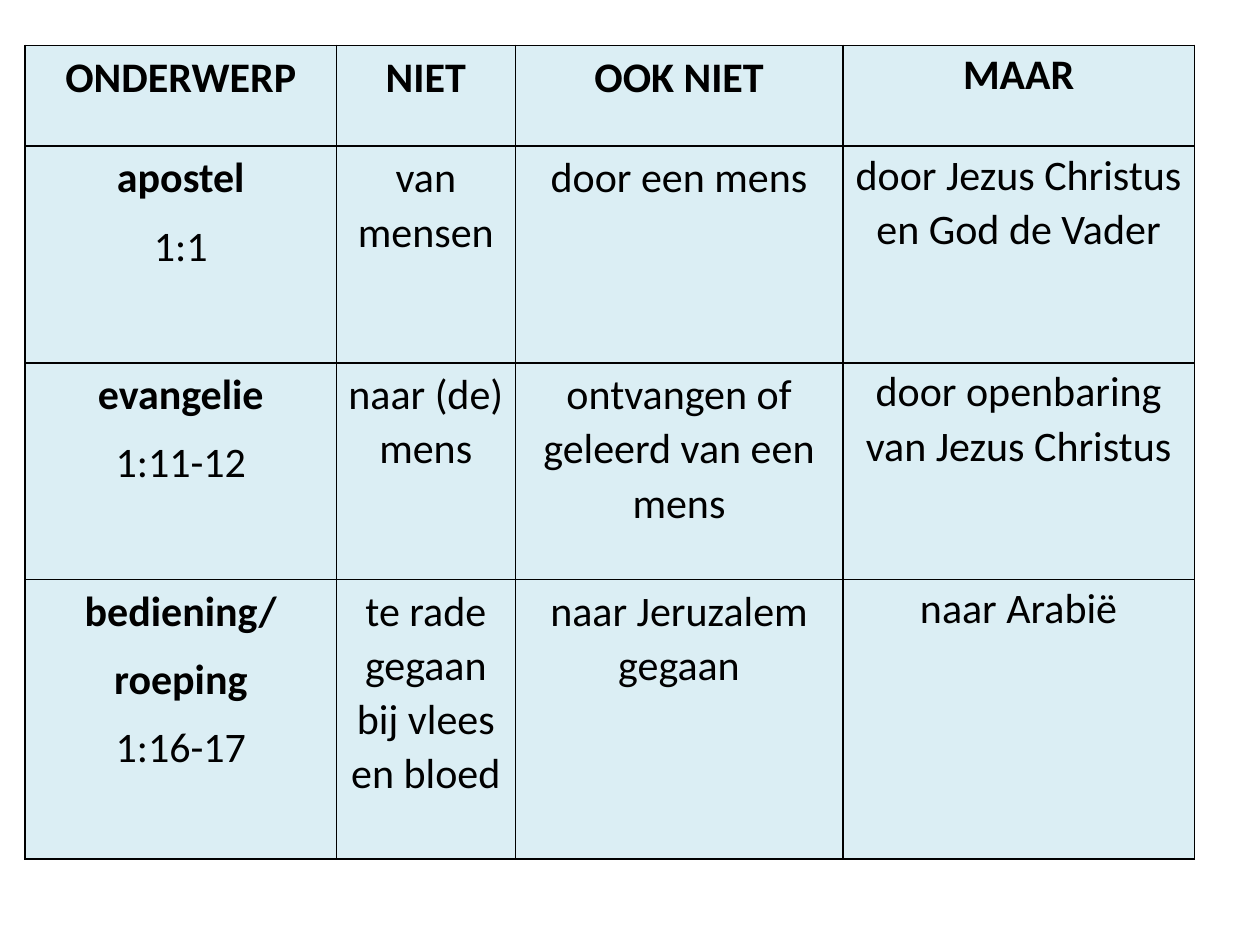
from dataclasses import dataclass

from lxml import etree
from pptx import Presentation
from pptx.dml.color import RGBColor
from pptx.enum.text import PP_ALIGN
from pptx.oxml.ns import qn
from pptx.table import _Cell
from pptx.util import Inches, Pt

CENTER = PP_ALIGN.CENTER
COLORS = {"fill": "DBEEF4", "text": "000000", "border": "000000"}
FONT = "Calibri"
COL_WIDTHS = [2.47, 1.42, 2.6, 2.79]
ROW_HEIGHTS = [0.8, 1.72, 1.72, 2.22]


@dataclass
class Topic:
    title: list[str]
    verse: str
    answers: list[str]


HEADERS = ["ONDERWERP", "NIET", "OOK NIET", "MAAR"]
TOPICS = [
    Topic(["apostel"], "1:1",
          ["van mensen", "door een mens", "door Jezus Christus en God de Vader"]),
    Topic(["evangelie"], "1:11-12",
          ["naar (de) mens", "ontvangen of geleerd van een mens",
           "door openbaring van Jezus Christus"]),
    Topic(["bediening/", "roeping"], "1:16-17",
          ["te rade gegaan bij vlees en bloed", "naar Jeruzalem gegaan", "naar Arabië"]),
]


def set_borders(cell: _Cell) -> None:
    tc_pr = cell._tc.get_or_add_tcPr()
    for side in ("lnL", "lnR", "lnT", "lnB"):
        ln = etree.SubElement(tc_pr, qn(f"a:{side}"), w=str(Pt(1)))
        fill = etree.SubElement(ln, qn("a:solidFill"))
        etree.SubElement(fill, qn("a:srgbClr"), val=COLORS["border"])


def set_margins(cell: _Cell, is_last: bool) -> None:
    left, top, bottom = (0.01, 0.01, 0) if is_last else (0.06, 0.03, 0.03)
    cell.margin_left = cell.margin_right = Inches(left)
    cell.margin_top = Inches(top)
    cell.margin_bottom = Inches(bottom)


def fill_cell(cell: _Cell, lines: list[str], bold_count: int) -> None:
    set_borders(cell)
    cell.fill.solid()
    cell.fill.fore_color.rgb = RGBColor.from_string(COLORS["fill"])
    tf = cell.text_frame
    tf.text = "\n".join(lines)
    for i, p in enumerate(tf.paragraphs):
        p.alignment = CENTER
        p.line_spacing = 1.06
        p.space_after = Pt(8)
        font = p.runs[0].font
        font.name = FONT
        font.size = Pt(24)
        font.bold = i < bold_count
        font.color.rgb = RGBColor.from_string(COLORS["text"])


def main() -> None:
    prs = Presentation()
    prs.slide_width, prs.slide_height = Inches(10), Inches(7.5)
    s = prs.slides.add_slide(prs.slide_layouts[6])
    table = s.shapes.add_table(
        len(ROW_HEIGHTS), len(COL_WIDTHS), Inches(0.2), Inches(0.36),
        Inches(sum(COL_WIDTHS)), Inches(sum(ROW_HEIGHTS))).table
    for column, width in zip(table.columns, COL_WIDTHS):
        column.width = Inches(width)
    for row, height in zip(table.rows, ROW_HEIGHTS):
        row.height = Inches(height)

    for c, header in enumerate(HEADERS):
        fill_cell(table.cell(0, c), [header], 1)
    for r, topic in enumerate(TOPICS, 1):
        fill_cell(table.cell(r, 0), topic.title + [topic.verse], len(topic.title))
        for c, answer in enumerate(topic.answers, 1):
            fill_cell(table.cell(r, c), [answer], 0)

    last = len(COL_WIDTHS) - 1
    for row in table.rows:
        for c, cell in enumerate(row.cells):
            set_margins(cell, c == last)
    prs.save("out.pptx")


if __name__ == "__main__":
    main()
